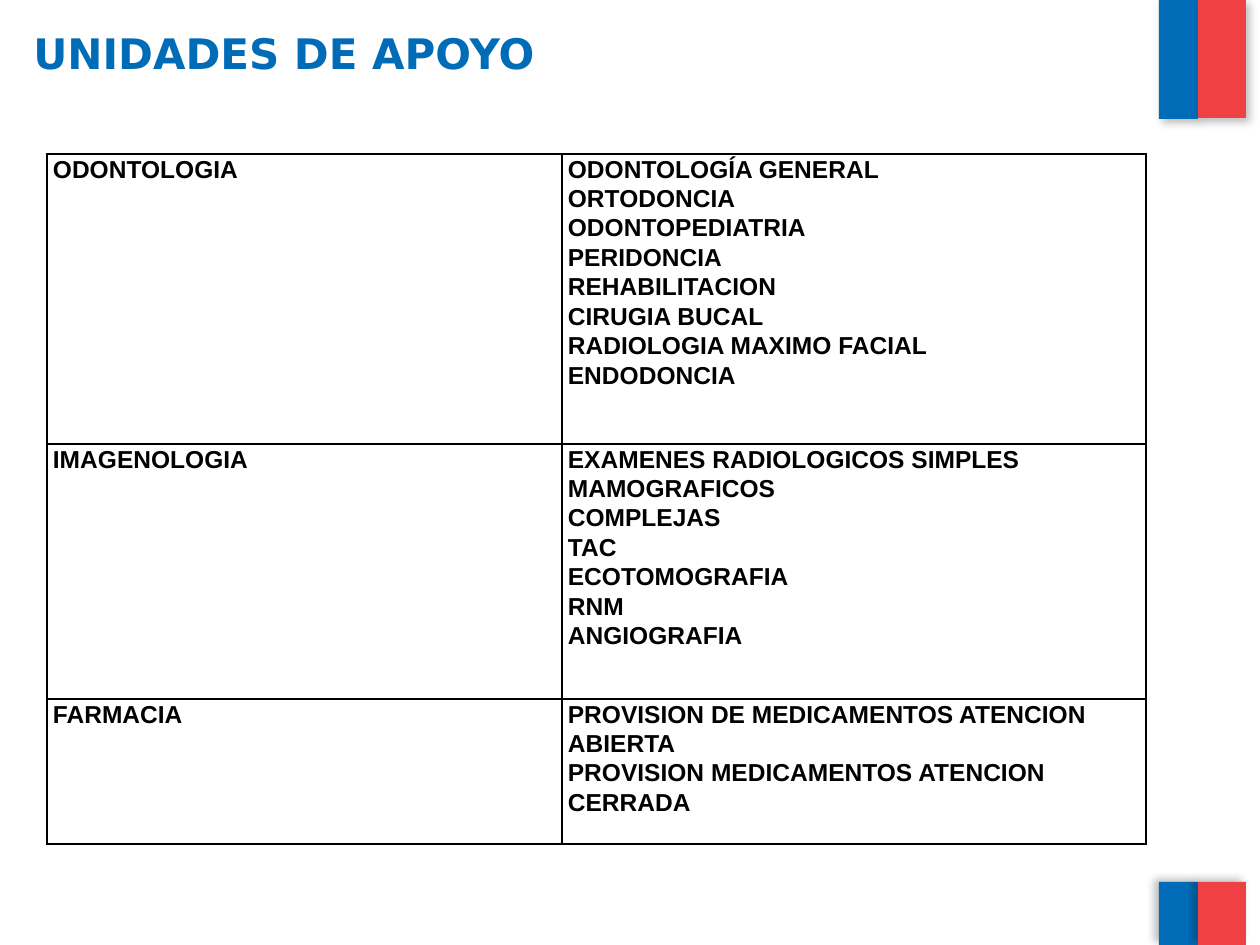
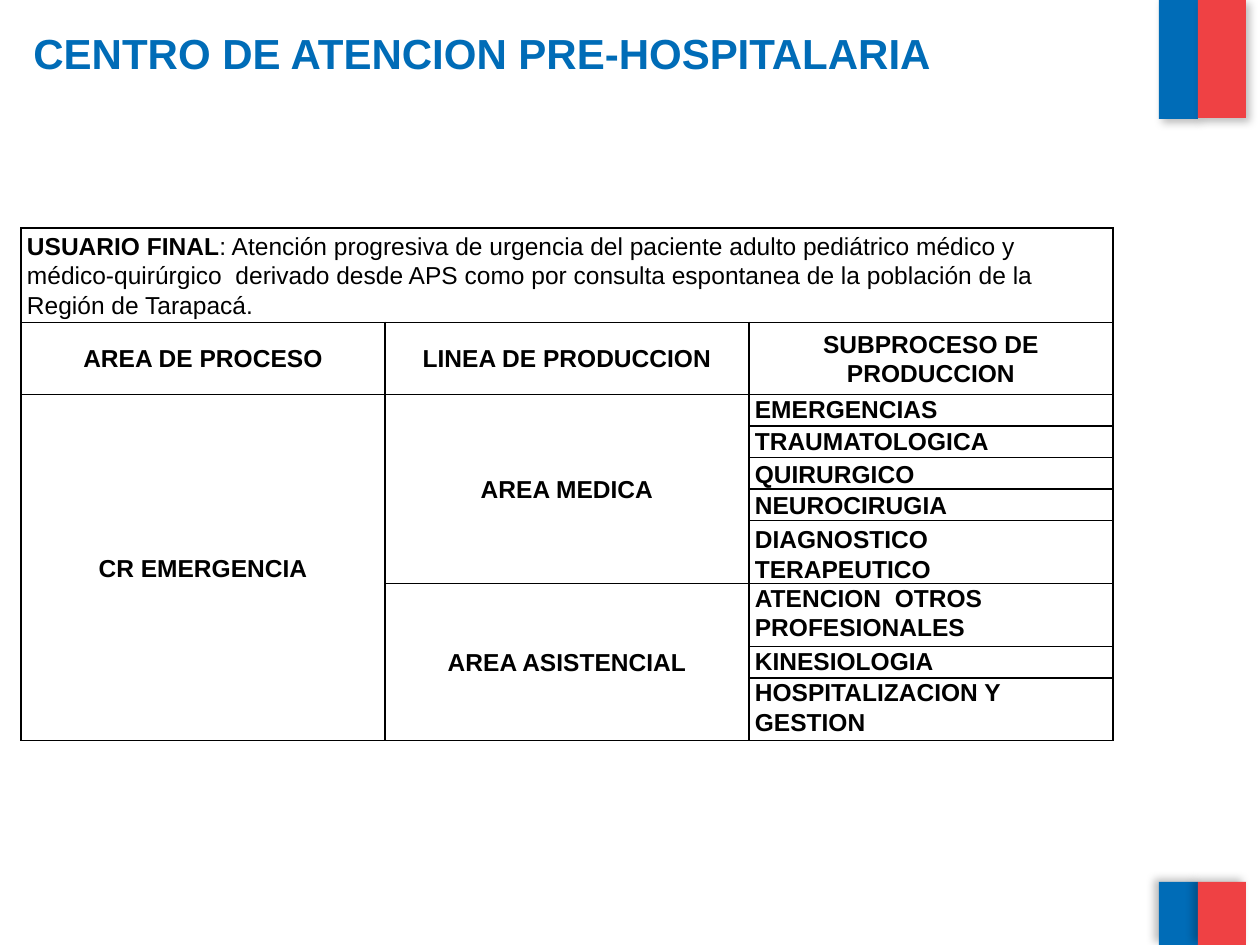
from dataclasses import dataclass

from lxml.etree import SubElement
from pptx import Presentation
from pptx.dml.color import RGBColor
from pptx.enum.shapes import MSO_SHAPE
from pptx.enum.text import MSO_ANCHOR, PP_ALIGN
from pptx.oxml.ns import qn
from pptx.slide import Slide
from pptx.table import _Cell
from pptx.text.text import _Run
from pptx.util import Emu, Pt

PX_PER_INCH = 126
BLUE = RGBColor(0x00, 0x6C, 0xB7)
RED = RGBColor(0xEF, 0x41, 0x44)
BLACK = RGBColor(0x00, 0x00, 0x00)
TABLE_FONT = "Arial"
BLANK_LAYOUT = 6


@dataclass(frozen=True)
class Band:
    left: int
    top: int
    width: int
    height: int
    color: RGBColor
    shadow_angle: int


@dataclass(frozen=True)
class Entry:
    row: int
    column: int
    text: str
    rest: str = ""
    rows: int = 1
    columns: int = 1
    align: PP_ALIGN = PP_ALIGN.LEFT
    anchor: MSO_ANCHOR = MSO_ANCHOR.TOP


@dataclass(frozen=True)
class Grid:
    left: int
    top: int
    columns: tuple[int, ...]
    rows: tuple[int, ...]
    entries: tuple[Entry, ...]


@dataclass(frozen=True)
class Page:
    title: str
    title_font: str
    grid: Grid


def centred(row: int, column: int, text: str, rows: int = 1) -> Entry:
    return Entry(row, column, text, rows=rows,
                 align=PP_ALIGN.CENTER, anchor=MSO_ANCHOR.MIDDLE)


BANDS = (
    Band(1159, -1, 39, 120, BLUE, 45),
    Band(1198, 0, 48, 118, RED, 45),
    Band(1159, 882, 39, 63, BLUE, 215),
    Band(1198, 882, 48, 63, RED, 215),
)

SUPPORT_UNITS = {
    "ODONTOLOGIA": (
        "ODONTOLOGÍA GENERAL", "ORTODONCIA", "ODONTOPEDIATRIA", "PERIDONCIA",
        "REHABILITACION", "CIRUGIA BUCAL", "RADIOLOGIA MAXIMO FACIAL",
        "ENDODONCIA"),
    "IMAGENOLOGIA": (
        "EXAMENES RADIOLOGICOS SIMPLES", "MAMOGRAFICOS", "COMPLEJAS", "TAC",
        "ECOTOMOGRAFIA", "RNM", "ANGIOGRAFIA"),
    "FARMACIA": (
        "PROVISION DE MEDICAMENTOS ATENCION ABIERTA",
        "PROVISION MEDICAMENTOS ATENCION CERRADA"),
}

HEADINGS = ("AREA DE PROCESO", "LINEA DE PRODUCCION", "SUBPROCESO DE PRODUCCION")

SUBPROCESSES = (
    ("EMERGENCIAS", MSO_ANCHOR.TOP),
    ("TRAUMATOLOGICA", MSO_ANCHOR.TOP),
    ("QUIRURGICO", MSO_ANCHOR.BOTTOM),
    ("NEUROCIRUGIA", MSO_ANCHOR.MIDDLE),
    ("DIAGNOSTICO TERAPEUTICO", MSO_ANCHOR.BOTTOM),
    ("ATENCION  OTROS PROFESIONALES", MSO_ANCHOR.TOP),
    ("KINESIOLOGIA", MSO_ANCHOR.TOP),
    ("HOSPITALIZACION Y GESTION", MSO_ANCHOR.TOP),
)

FINAL_USER = (
    ": Atención progresiva de urgencia del paciente adulto pediátrico médico y "
    "médico-quirúrgico  derivado desde APS como por consulta espontanea de la "
    "población de la Región de Tarapacá."
)

PAGES = (
    Page("UNIDADES DE APOYO", "DejaVu Sans", Grid(
        47, 154, (515, 584), (290, 255, 145),
        tuple(Entry(row, column, text)
              for row, (unit, services) in enumerate(SUPPORT_UNITS.items())
              for column, text in enumerate((unit, "\n".join(services)))),
    )),
    Page("CENTRO DE ATENCION PRE-HOSPITALARIA", "Arial", Grid(
        21, 228, (364,) * 3, (89, 72, 29, 29, 29, 29, 59, 59, 29, 59),
        (
            Entry(0, 0, "USUARIO FINAL", FINAL_USER, columns=3,
                  anchor=MSO_ANCHOR.MIDDLE),
            *(centred(1, column, text) for column, text in enumerate(HEADINGS)),
            centred(2, 0, "CR EMERGENCIA", rows=8),
            centred(2, 1, "AREA MEDICA", rows=5),
            centred(7, 1, "AREA ASISTENCIAL", rows=3),
            *(Entry(row, 2, text, anchor=anchor)
              for row, (text, anchor) in enumerate(SUBPROCESSES, start=2)),
        ),
    )),
)


def px(length: int) -> Emu:
    return Emu(round(length * 914400 / PX_PER_INCH))


def style_run(span: _Run, font: str, size: int, color: RGBColor, bold: bool) -> None:
    span.font.name = font
    span.font.size = Pt(size)
    span.font.color.rgb = color
    span.font.bold = bold


def draw_band(slide: Slide, band: Band) -> None:
    shape = slide.shapes.add_shape(
        MSO_SHAPE.RECTANGLE, px(band.left), px(band.top),
        px(band.width), px(band.height))
    shape.shadow.inherit = False
    shape.fill.solid()
    shape.fill.fore_color.rgb = band.color
    shape.line.fill.background()
    effects = shape._element.spPr.find(qn("a:effectLst"))
    shadow = SubElement(
        effects, qn("a:outerShdw"), blurRad=str(Pt(5)), dist=str(Pt(3)),
        dir=str(band.shadow_angle * 60000), algn="ctr", rotWithShape="0")
    color = SubElement(shadow, qn("a:srgbClr"), val=str(BLACK))
    SubElement(color, qn("a:alpha"), val="25000")


def draw_title(slide: Slide, text: str, font: str) -> None:
    box = slide.shapes.add_textbox(px(21), px(21), px(1125), px(158))
    frame = box.text_frame
    frame.word_wrap = True
    frame.text = text
    style_run(frame.paragraphs[0].runs[0], font, 24, BLUE, True)


def draw_borders(cell: _Cell) -> None:
    properties = cell._tc.get_or_add_tcPr()
    for position, side in enumerate(("a:lnL", "a:lnR", "a:lnT", "a:lnB")):
        line = SubElement(properties, qn(side), w=str(Pt(1)))
        fill = SubElement(line, qn("a:solidFill"))
        SubElement(fill, qn("a:srgbClr"), val=str(BLACK))
        properties.insert(position, line)


def fill_cell(cell: _Cell, entry: Entry) -> None:
    cell.text_frame.text = entry.text
    cell.vertical_anchor = entry.anchor
    for para in cell.text_frame.paragraphs:
        para.alignment = entry.align
        para.line_spacing = 1.07
        style_run(para.runs[0], TABLE_FONT, 14, BLACK, True)
    if entry.rest:
        span = cell.text_frame.paragraphs[0].add_run()
        span.text = entry.rest
        style_run(span, TABLE_FONT, 14, BLACK, False)


def draw_grid(slide: Slide, grid: Grid) -> None:
    table = slide.shapes.add_table(
        len(grid.rows), len(grid.columns), px(grid.left), px(grid.top),
        px(sum(grid.columns)), px(sum(grid.rows))).table
    table.first_row = False
    table.horz_banding = False
    for column, width in zip(table.columns, grid.columns):
        column.width = px(width)
    for row, height in zip(table.rows, grid.rows):
        row.height = px(height)
    for cell in table.iter_cells():
        cell.margin_left = cell.margin_right = px(6)
        cell.margin_top = cell.margin_bottom = 0
        cell.fill.background()
        draw_borders(cell)
    for entry in grid.entries:
        cell = table.cell(entry.row, entry.column)
        if entry.rows > 1 or entry.columns > 1:
            cell.merge(table.cell(entry.row + entry.rows - 1,
                                  entry.column + entry.columns - 1))
        fill_cell(cell, entry)


def main() -> None:
    deck = Presentation()
    deck.slide_width = px(1260)
    deck.slide_height = px(945)
    for page in PAGES:
        slide = deck.slides.add_slide(deck.slide_layouts[BLANK_LAYOUT])
        for band in BANDS:
            draw_band(slide, band)
        draw_title(slide, page.title, page.title_font)
        draw_grid(slide, page.grid)
    deck.save("out.pptx")


if __name__ == "__main__":
    main()
